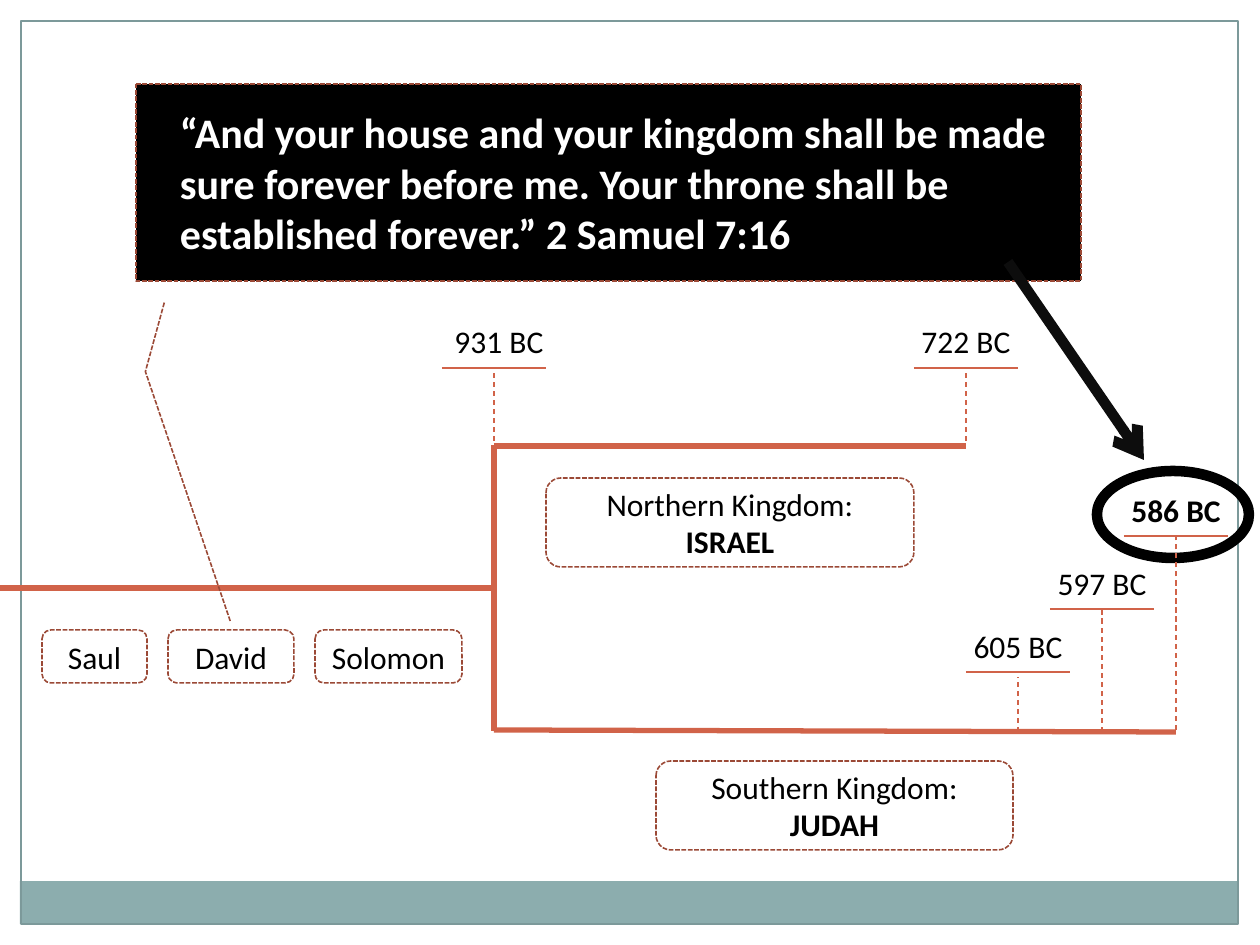
import pptx
import pptx.util
import pptx.dml.color
import pptx.enum.dml
import pptx.enum.shapes
import pptx.enum.text
import pptx.oxml
import pptx.oxml.ns
import lxml.etree

PX = 914400 / 126
RGB = pptx.dml.color.RGBColor.from_string
KIND = pptx.enum.shapes.MSO_SHAPE
DASH = pptx.enum.dml.MSO_LINE
THEME = {
    "font": "Calibri", "body": 18, "verse": 24,
    "black": RGB("000000"), "white": RGB("FFFFFF"), "ink": RGB("0D0D0D"),
    "red": RGB("D16349"), "brown": RGB("9B4936"),
    "band": RGB("8CADAE"), "frame": RGB("7C999A"),
    "thin": 0.75, "edge": 0.9, "thick": 3, "heavy": 6,
}

deck = pptx.Presentation()
deck.slide_width, deck.slide_height = round(1260 * PX), round(945 * PX)
slide = deck.slides.add_slide(deck.slide_layouts[6])
shapes = slide.shapes


def line(x1, y1, x2, y2, width, color="red", dash=None):
    ends = [round(v * PX) for v in (x1, y1, x2, y2)]
    link = shapes.add_connector(pptx.enum.shapes.MSO_CONNECTOR.STRAIGHT, *ends)
    link.line.color.rgb = THEME[color]
    link.line.width = pptx.util.Pt(THEME[width])
    if dash:
        link.line.dash_style = dash
    lxml.etree.SubElement(link._element.spPr, pptx.oxml.ns.qn("a:effectLst"))
    return link


def write(shape, text, size="body", color="black", bold=False, align="CENTER"):
    frame = shape.text_frame
    frame.word_wrap = True
    frame.text = text
    for para in frame.paragraphs:
        para.alignment = getattr(pptx.enum.text.PP_ALIGN, align)
        for run in para.runs:
            run.font.name = THEME["font"]
            run.font.size = pptx.util.Pt(THEME[size])
            run.font.color.rgb = THEME[color]
            run.font.bold = bold
    return frame


# Footer band, page frame and the ring around the last date
for kind, at, fill, edge, width in [
    (KIND.RECTANGLE, (20, 881, 1218, 43), "band", None, None),
    (KIND.RECTANGLE, (21, 21, 1217, 903), None, "frame", "thin"),
    (KIND.OVAL, (1097, 471, 152, 87), None, "black", "heavy"),
]:
    shape = shapes.add_shape(kind, *[round(v * PX) for v in at])
    shape.shadow.inherit = False
    if fill:
        shape.fill.solid()
        shape.fill.fore_color.rgb = THEME[fill]
    else:
        shape.fill.background()
    if edge:
        shape.line.color.rgb = THEME[edge]
        shape.line.width = pptx.util.Pt(THEME[width])
    else:
        shape.line.fill.background()

# Trunk, fork and the two kingdom branches
for ends in [(0, 588, 494, 588), (494, 730, 1176, 732),
             (494, 446, 966, 446), (494, 445, 494, 731)]:
    line(*ends, "thick")

# Dates: label, rule below it and dashed drop to the branch
for text, mid, top, rule, start, foot in [
    ("931 BC", 494, 316, 368, 373, 441),
    ("722 BC", 966, 316, 368, 373, 441),
    ("605 BC", 1018, 621, 672, 677, 732),
    ("597 BC", 1102, 558, 609, 609, 732),
    ("586 BC", 1176, 485, 536, 536, 730),
]:
    left = mid - 58 if text == "931 BC" else mid - 63
    label = shapes.add_textbox(*[round(v * PX) for v in (left, top, 126, 50)])
    write(label, text, bold=text == "586 BC")
    line(mid, foot, mid, start, "thin", dash=DASH.DASH)
    line(mid - 52, rule, mid + 52, rule, "thin")

# Kings and kingdoms
for text, *at in [
    ("Saul", 42, 630, 105, 53),
    ("David", 168, 630, 126, 53),
    ("Solomon", 315, 630, 147, 53),
    ("Northern Kingdom:\nISRAEL", 546, 478, 368, 89),
    ("Southern Kingdom:\nJUDAH", 656, 761, 357, 89),
]:
    box = shapes.add_shape(KIND.ROUNDED_RECTANGLE, *[round(v * PX) for v in at])
    box.shadow.inherit = False
    box.fill.background()
    box.line.color.rgb = THEME["brown"]
    box.line.width = pptx.util.Pt(THEME["edge"])
    box.line.dash_style = DASH.SQUARE_DOT
    frame = write(box, text)
    for para in frame.paragraphs[1:]:
        para.runs[0].font.bold = True

# Verse callout pointing to David
verse = shapes.add_shape(KIND.LINE_CALLOUT_2,
                         *[round(v * PX) for v in (136, 84, 945, 197)])
for i, value in enumerate([1.11, 0.03, 1.46, 0.01, 2.73, 0.1]):
    verse.adjustments[i] = value
verse.shadow.inherit = False
verse.fill.solid()
verse.fill.fore_color.rgb = THEME["black"]
verse.line.color.rgb = THEME["brown"]
verse.line.width = pptx.util.Pt(THEME["edge"])
verse.line.dash_style = DASH.SQUARE_DOT
frame = write(verse, "“And your house and your kingdom shall be made sure forever "
              "before me. Your throne shall be established forever.” 2 Samuel 7:16",
              "verse", "white", True, "LEFT")
frame.margin_left, frame.margin_right = round(44 * PX), round(34 * PX)

# Arrow from the verse to the last date
arrow = line(1008, 262, 1144, 460, "heavy", "ink")
head = lxml.etree.SubElement(arrow.line._get_or_add_ln(),
                             pptx.oxml.ns.qn("a:tailEnd"))
head.set("type", "arrow")

deck.save("out.pptx")
